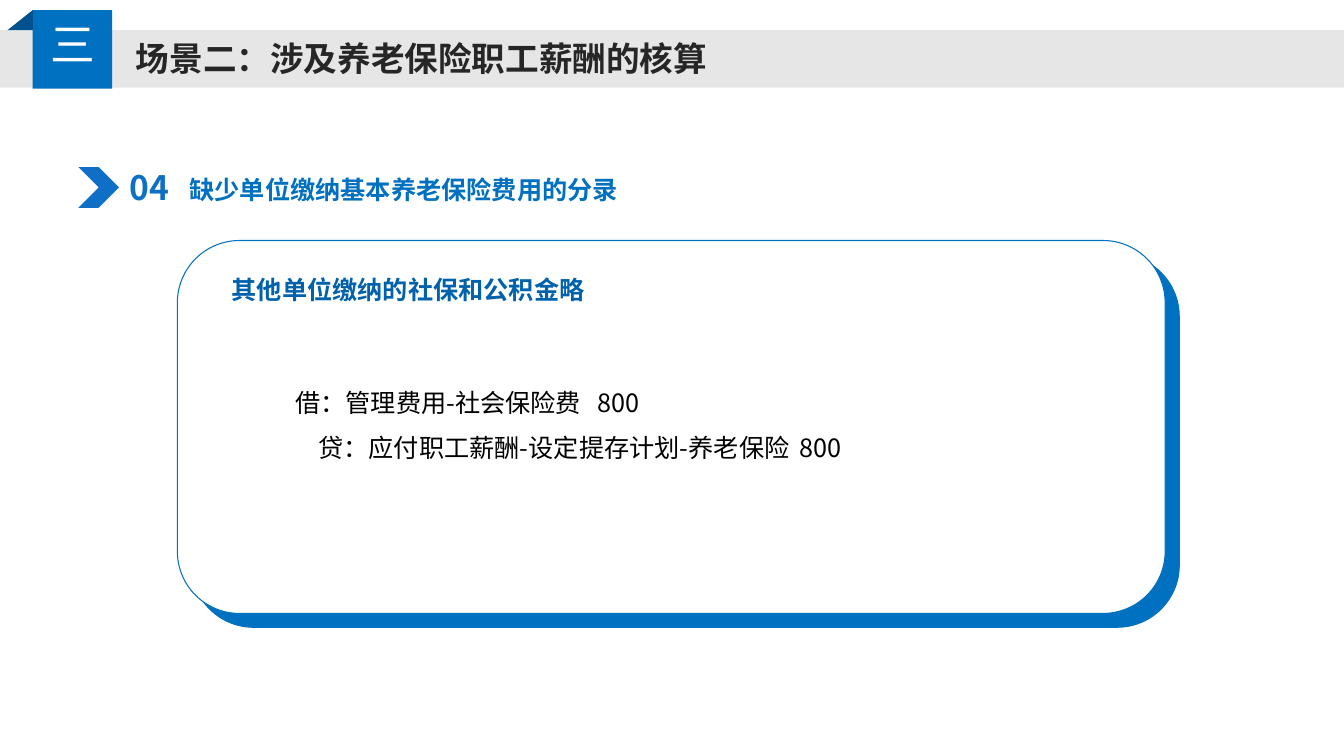
import dataclasses
import typing

import lxml.etree
import pptx
import pptx.dml.color
import pptx.enum.shapes
import pptx.enum.text
import pptx.oxml.ns
import pptx.util

Pt = pptx.util.Pt
Shape = pptx.enum.shapes.MSO_SHAPE
Align = pptx.enum.text.PP_ALIGN
Anchor = pptx.enum.text.MSO_ANCHOR
AutoSize = pptx.enum.text.MSO_AUTO_SIZE
Bounds = tuple[float, float, float, float]


@dataclasses.dataclass(frozen=True)
class Theme:
    blue: str = "0070C0"
    fold_blue: str = "00518E"
    marker_blue: str = "0F6FC6"
    heading_blue: str = "0062AC"
    band: str = "E6E6E6"
    title: str = "262626"
    white: str = "FFFFFF"
    black: str = "000000"
    font: str = "Noto Sans CJK SC"
    numeral_font: str = "Noto Sans CJK JP"
    numeral_size: float = 32
    title_size: float = 24
    body_size: float = 18


THEME = Theme()


@dataclasses.dataclass(frozen=True)
class Block:
    bounds: Bounds
    fill: str
    preset: Shape = Shape.RECTANGLE
    line: str | None = None


@dataclasses.dataclass(frozen=True)
class Line:
    """One paragraph; indent and tab are measured from the text edge."""
    text: str
    indent: float = 0
    tab: float | None = None


@dataclasses.dataclass(frozen=True)
class Label:
    bounds: Bounds
    lines: tuple[Line, ...]
    size: float
    color: str
    bold: bool = True
    font: str = THEME.font
    wrap: bool = True
    grow: bool = True
    para_format: dict[str, typing.Any] = dataclasses.field(default_factory=dict)


CARD_WIDTH, CARD_HEIGHT = 705.6, 266.4
BLOCKS = (
    Block((0, 21.6, 960, 41.04), THEME.band),
    Block((23.3, 7.2, 56.9, 56.1), THEME.blue),
    Block((136.8, 181.7, CARD_WIDTH, CARD_HEIGHT), THEME.blue, Shape.ROUNDED_RECTANGLE, THEME.blue),
    Block((126.7, 171.8, CARD_WIDTH, CARD_HEIGHT), THEME.white, Shape.ROUNDED_RECTANGLE, THEME.blue),
    Block((56, 119.4, 29, 29), THEME.marker_blue, Shape.CHEVRON),
)
FOLD = ((5.3, 21.6), (23.4, 7.2), (23.4, 21.6))
LABELS = (
    Label((90, 23.8, 426.2, 36), (Line("场景二：涉及养老保险职工薪酬的核算"),),
          THEME.title_size, THEME.title, wrap=False),
    Label((28.8, 8.6, 46.8, 46.1), (Line("三"),), THEME.numeral_size, THEME.white,
          bold=False, font=THEME.numeral_font, wrap=False),
    Label((158.4, 181.4, 647.3, 36), (Line("其他单位缴纳的社保和公积金略"),),
          THEME.body_size, THEME.heading_blue, para_format={"line_spacing": 1.5}),
    Label((76.3, 105.1, 60.5, 56.9), (Line("04"),), THEME.title_size, THEME.marker_blue,
          grow=False, para_format={"alignment": Align.CENTER}),
    Label((128.2, 114.5, 323.3, 35.3), (Line("缺少单位缴纳基本养老保险费用的分录"),),
          THEME.body_size, THEME.blue, wrap=False,
          para_format={"line_spacing": 1.3, "space_after": Pt(6)}),
    Label((167.8, 262.1, 644.4, 69.1),
          (Line("借：管理费用-社会保险费\t800", 36, 393),
           Line("贷：应付职工薪酬-设定提存计划-养老保险\t800", 52.5, 445)),
          THEME.body_size, THEME.black, bold=False, para_format={"line_spacing": 1.5}),
)


def rgb(color: str) -> pptx.dml.color.RGBColor:
    return pptx.dml.color.RGBColor.from_string(color)


def apply(target: typing.Any, values: dict[str, typing.Any]) -> None:
    for name, value in values.items():
        setattr(target, name, value)


def paint(shape: typing.Any, fill: str, line: str | None = None) -> None:
    shape.shadow.inherit = False
    shape.fill.solid()
    shape.fill.fore_color.rgb = rgb(fill)
    if line is None:
        shape.line.fill.background()
    else:
        shape.line.color.rgb = rgb(line)
        shape.line.width = Pt(0.75)


def draw_block(shapes: typing.Any, block: Block) -> None:
    shape = shapes.add_shape(block.preset, *map(Pt, block.bounds))
    paint(shape, block.fill, block.line)


def draw_fold(shapes: typing.Any) -> None:
    start, *corners = [(Pt(x), Pt(y)) for x, y in FOLD]
    builder = shapes.build_freeform(*start)
    builder.add_line_segments(corners, close=True)
    paint(builder.convert_to_shape(), THEME.fold_blue)


def write_line(para: typing.Any, line: Line, label: Label) -> None:
    apply(para, label.para_format)
    qn = pptx.oxml.ns.qn
    if line.indent:
        properties = para._p.get_or_add_pPr()
        properties.set("marL", "0")
        properties.set("indent", str(Pt(line.indent)))
        if line.tab is not None:
            tabs = lxml.etree.SubElement(properties, qn("a:tabLst"))
            lxml.etree.SubElement(tabs, qn("a:tab"), pos=str(Pt(line.tab)), algn="l")
    span = para.add_run()
    span.text = line.text
    apply(span.font, {"name": label.font, "size": Pt(label.size), "bold": label.bold})
    span.font.color.rgb = rgb(label.color)
    lxml.etree.SubElement(span._r.get_or_add_rPr(), qn("a:ea"), typeface=label.font)


def draw_label(shapes: typing.Any, label: Label) -> None:
    frame = shapes.add_textbox(*map(Pt, label.bounds)).text_frame
    apply(frame, {
        "word_wrap": label.wrap,
        "auto_size": AutoSize.SHAPE_TO_FIT_TEXT if label.grow else AutoSize.NONE,
        "vertical_anchor": Anchor.TOP if label.grow else Anchor.MIDDLE,
    })
    for index, line in enumerate(label.lines):
        para = frame.add_paragraph() if index else frame.paragraphs[0]
        write_line(para, line, label)


def main() -> None:
    deck = pptx.Presentation()
    apply(deck, {"slide_width": Pt(960), "slide_height": Pt(540)})
    page = deck.slides.add_slide(deck.slide_layouts[6])
    for block in BLOCKS:
        draw_block(page.shapes, block)
    draw_fold(page.shapes)
    for label in LABELS:
        draw_label(page.shapes, label)
    deck.save("out.pptx")


if __name__ == "__main__":
    main()
